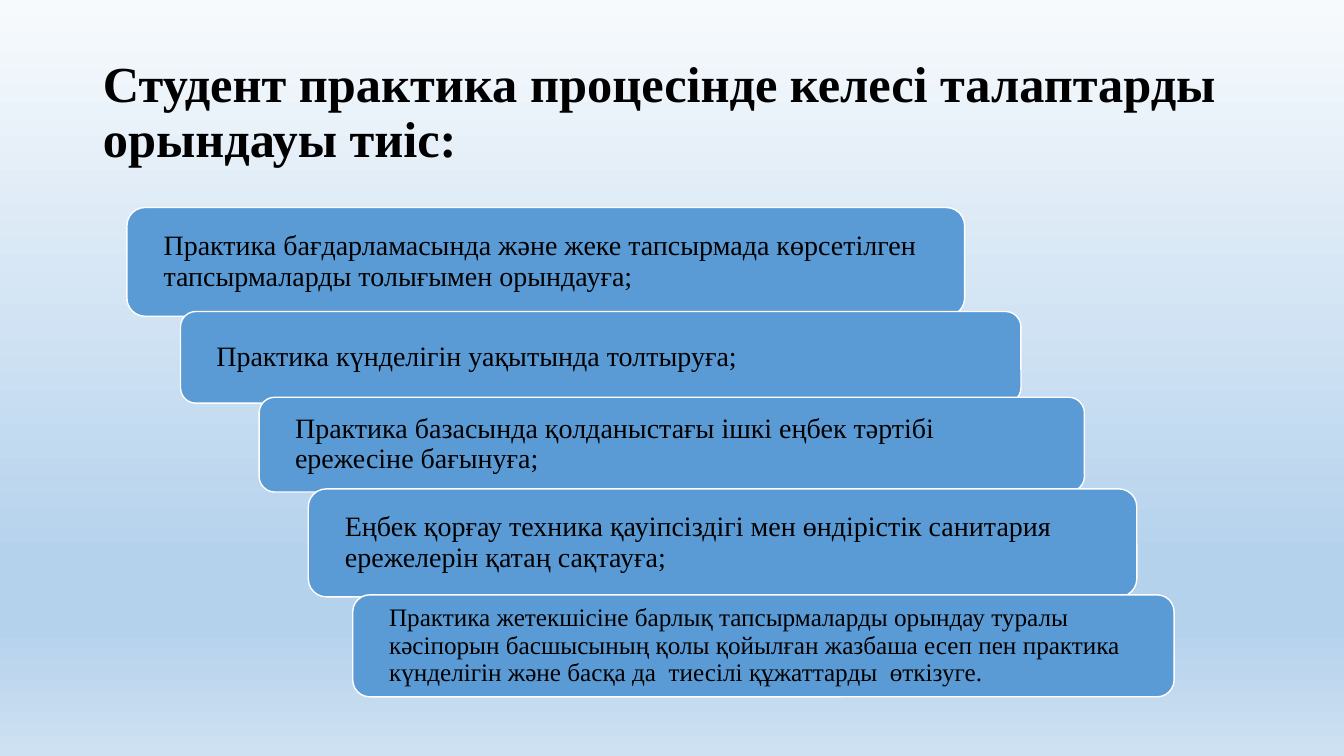
from pptx import Presentation
from pptx.dml.color import RGBColor
from pptx.enum.shapes import MSO_SHAPE
from pptx.enum.text import MSO_ANCHOR, MSO_AUTO_SIZE, PP_ALIGN
from pptx.oxml.ns import qn
from pptx.util import Cm, Pt
from lxml.etree import SubElement

COLOURS = {"text": "000000", "box": "5B9BD5", "outline": "FFFFFF"}
BACKGROUND_STOPS = [(0, "F7FAFD"), (74, "B5D2EC"), (83, "B5D2EC"), (100, "CEE1F2")]
TITLE = "Студент практика процесінде келесі талаптарды орындауы тиіс:"

# left, top, width, height in centimetres, text size, wording
REQUIREMENTS = [
    (3.2, 5.23, 21.11, 2.74, 20,
     "Практика бағдарламасында және жеке тапсырмада көрсетілген "
     "тапсырмаларды толығымен орындауға;"),
    (4.55, 7.85, 21.18, 2.31, 20,
     "Практика күнделігін уақытында толтыруға;"),
    (6.53, 10.01, 20.8, 2.39, 20,
     "Практика базасында қолданыстағы ішкі еңбек тәртібі  ережесіне бағынуға;"),
    (7.77, 12.32, 20.88, 2.72, 20,
     "Еңбек қорғау техника қауіпсіздігі мен өндірістік санитария "
     "ережелерін қатаң сақтауға;"),
    (8.89, 14.99, 20.7, 2.57, 18,
     "Практика жетекшісіне барлық тапсырмаларды орындау туралы кәсіпорын "
     "басшысының қолы қойылған жазбаша есеп пен практика күнделігін және "
     "басқа да  тиесілі құжаттарды  өткізуге."),
]


class SlideBuilder:
    font_name = "Times New Roman"

    def __init__(self, slide):
        self.slide = slide

    def colour(self, name):
        return RGBColor.from_string(COLOURS[name])

    def background(self, stops):
        """Fill the background from top to bottom with (percent, hex) stops."""
        fill = self.slide.background.fill
        fill.gradient()
        fill.gradient_angle = 270
        stop_list = self.slide.element.find(".//" + qn("a:gsLst"))
        for default_stop in list(stop_list):
            stop_list.remove(default_stop)
        for percent, value in stops:
            stop = SubElement(stop_list, qn("a:gs"), pos=str(percent * 1000))
            SubElement(stop, qn("a:srgbClr"), val=value)

    def set_text(self, shape, text, size, bold=False):
        text_frame = shape.text_frame
        text_frame.text = text
        text_frame.word_wrap = True
        text_frame.auto_size = MSO_AUTO_SIZE.NONE
        text_frame.vertical_anchor = MSO_ANCHOR.MIDDLE
        paragraph = text_frame.paragraphs[0]
        paragraph.alignment = PP_ALIGN.LEFT
        paragraph.line_spacing = 0.9
        font = paragraph.runs[0].font
        font.name = self.font_name
        font.size = Pt(size)
        font.bold = bold
        font.color.rgb = self.colour("text")

    def title(self, left, top, width, height, text, size):
        title = self.slide.shapes.title
        title.left, title.top = Cm(left), Cm(top)
        title.width, title.height = Cm(width), Cm(height)
        self.set_text(title, text, size, bold=True)

    def box(self, left, top, width, height, size, text):
        shape = self.slide.shapes.add_shape(
            MSO_SHAPE.ROUNDED_RECTANGLE, Cm(left), Cm(top), Cm(width), Cm(height))
        shape.shadow.inherit = False
        shape.fill.solid()
        shape.fill.fore_color.rgb = self.colour("box")
        shape.line.color.rgb = self.colour("outline")
        shape.line.width = Pt(1)
        text_frame = shape.text_frame
        text_frame.margin_left = text_frame.margin_right = Cm(0.79)
        text_frame.margin_top = text_frame.margin_bottom = 0
        self.set_text(shape, text, size)


def main():
    presentation = Presentation()
    presentation.slide_width, presentation.slide_height = Cm(33.87), Cm(19.05)
    title_only = presentation.slide_layouts[5]
    builder = SlideBuilder(presentation.slides.add_slide(title_only))
    builder.background(BACKGROUND_STOPS)
    builder.title(2.34, 1.02, 29.21, 3.68, TITLE, 36)
    for requirement in REQUIREMENTS:
        builder.box(*requirement)
    presentation.save("out.pptx")


if __name__ == "__main__":
    main()
